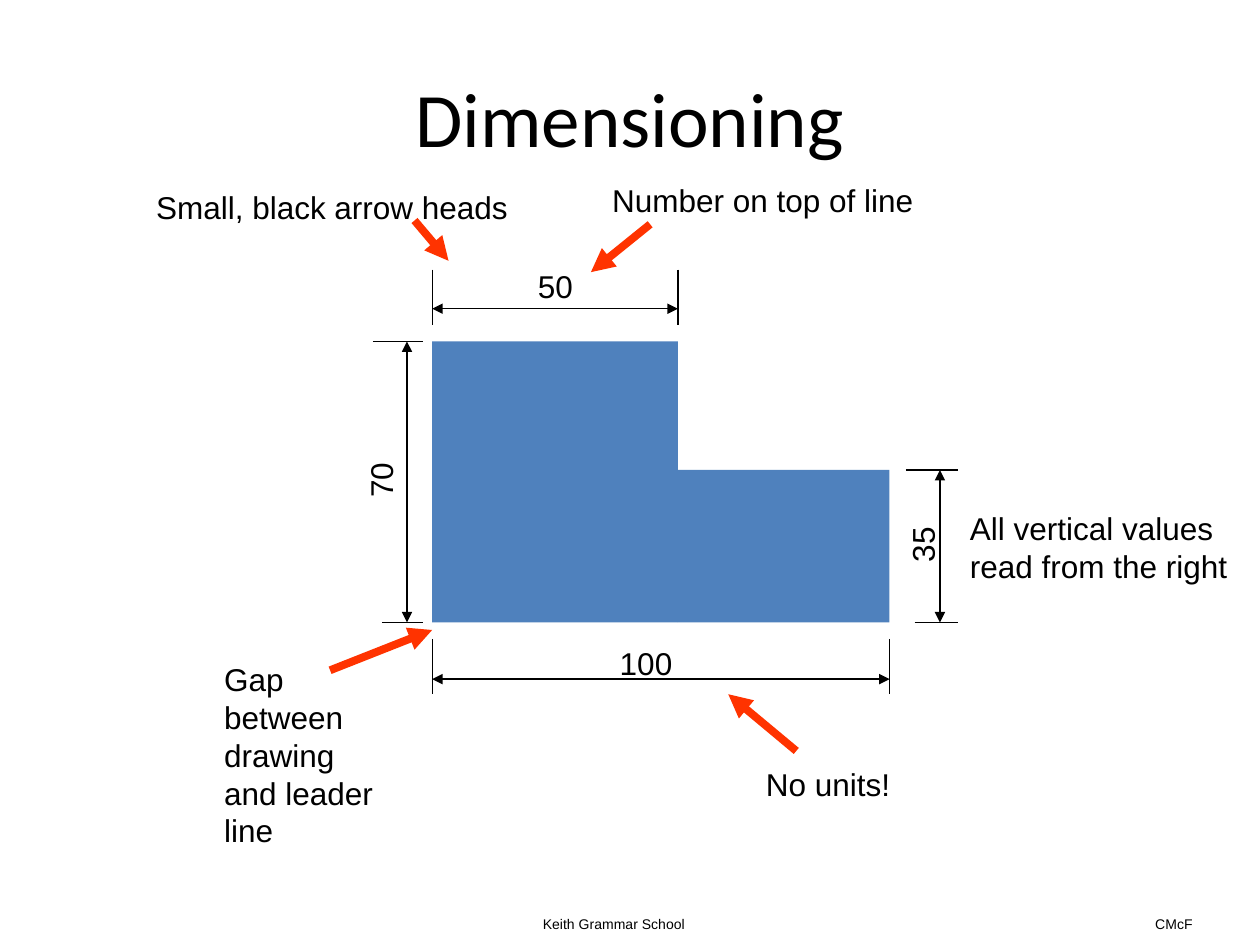
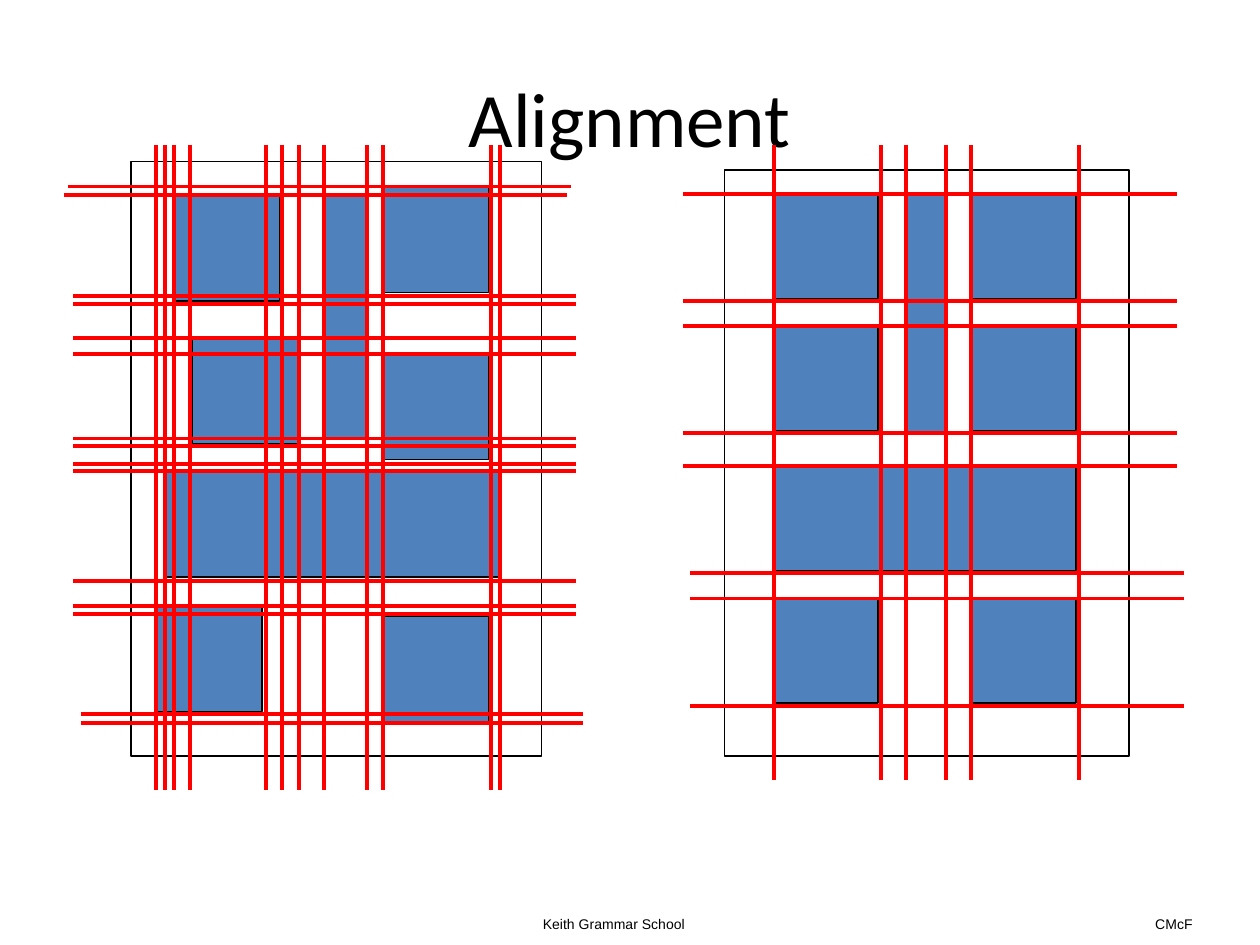
"""Build two slides on technical drawing: dimensioning and alignment."""
import pptx
import pptx.dml.color
import pptx.enum.shapes
import pptx.enum.text
import pptx.oxml
import pptx.oxml.ns
import pptx.util

Inches = pptx.util.Inches
ALIGN = pptx.enum.text.PP_ALIGN
COLOURS = {"ink": "000000", "part": "4F81BD", "paper": "FFFFFF",
           "note": "FF3300", "guide": "FF0000"}

FOOTERS = [("Keith Grammar School", (4.21, 7.22, 1.33, 0.23)),
           ("CMcF", (9.07, 7.22, 0.5, 0.23))]

LEFT, STEP, RIGHT = 3.43, 5.38, 7.06
TOP, SHELF, BASE = 2.71, 3.73, 4.94
PARTS = [(LEFT, TOP, STEP, BASE), (STEP, SHELF, RIGHT, BASE)]
SPANS = [
    {"value": "100", "box": (4.82, 5.06, 0.62, 0.4), "ends": (LEFT, RIGHT),
     "line": 5.39, "leads": [(5.07, 5.51), (5.07, 5.51)]},
    {"value": "50", "box": (4.17, 2.07, 0.48, 0.4), "ends": (LEFT, STEP),
     "line": 2.45, "leads": [(2.14, 2.58), (2.14, 2.58)]},
    {"value": "70", "box": (2.78, 3.61, 0.48, 0.4), "ends": (TOP, BASE),
     "line": 3.23, "leads": [(2.96, 3.36), (3.03, 3.36)], "upright": True},
    {"value": "35", "box": (7.08, 4.12, 0.48, 0.4), "ends": (SHELF, BASE),
     "line": 7.46, "leads": [(7.19, 7.6), (7.26, 7.6)], "upright": True},
]
NOTES = [
    ("Gap between drawing and leader line", (1.68, 5.19, 1.41, 1.6), True),
    ("Number on top of line", (4.76, 1.39, 2.59, 0.4), False),
    ("Small, black arrow heads", (1.14, 1.44, 2.99, 0.4), False),
    ("No units!", (5.98, 6.02, 1.19, 0.4), False),
    ("All vertical values\nread from the right", (7.6, 3.99, 2.24, 0.7), False),
]
ARROWS = [((2.62, 5.32), (3.43, 5)), ((3.29, 1.75), (3.56, 2.07)),
          ((5.16, 1.78), (4.69, 2.16)), ((6.32, 5.96), (5.78, 5.51))]

SHEETS = [
    {"page": (5.75, 1.35, 3.21, 4.65), "size": 0.83,
     "tiles": [(x, y) for y in (1.54, 2.59, 4.75) for x in (6.14, 7.71)],
     "bars": [(6.14, 3.7, 2.4, 0.83), (7.19, 1.54, 0.33, 1.9)],
     "span": (1.15, 6.19),
     "cols": [6.14, 6.99, 7.19, 7.51, 7.71, 8.56],
     "reach": 3.92,
     "rows": {5.42: [1.54, 2.39, 2.59, 3.44, 3.7], 5.48: [4.55, 4.75, 5.6]}},
    {"page": (1.04, 1.28, 3.26, 4.72), "size": 0.84,
     "tiles": [(1.38, 1.55), (1.53, 2.68), (1.24, 4.81),
               (3.04, 1.48), (3.04, 2.81), (3.04, 4.89)],
     "bars": [(1.31, 3.74, 2.66, 0.84), (2.57, 1.55, 0.33, 1.93)],
     "span": (1.15, 6.27),
     "cols": [1.24, 1.31, 1.38, 1.51, 2.11, 2.24,
              2.37, 2.57, 2.91, 3.04, 3.9, 3.97],
     "reach": 3.99,
     "rows": {0.54: [1.48], 0.51: [1.55],
              0.58: [2.35, 2.41, 2.68, 2.81, 3.48, 3.54,
                     3.68, 3.74, 4.61, 4.81, 4.87],
              0.64: [5.67, 5.74]}},
]


def tint(name):
    return pptx.dml.color.RGBColor.from_string(COLOURS[name])


def write(slide, text, box, size=18, face="Arial", wrap=False, grow=True,
          align=ALIGN.LEFT, anchor=pptx.enum.text.MSO_ANCHOR.TOP, turn=0):
    label = slide.shapes.add_textbox(*map(Inches, box))
    label.rotation = turn
    frame = label.text_frame
    frame.text = text
    frame.word_wrap = wrap
    frame.vertical_anchor = anchor
    if grow:
        frame.auto_size = pptx.enum.text.MSO_AUTO_SIZE.SHAPE_TO_FIT_TEXT
    for para in frame.paragraphs:
        para.alignment = align
        para.font.size = pptx.util.Pt(size)
        para.font.name = face
        para.font.color.rgb = tint("ink")


def block(shapes, box, fill="part", edge=None):
    rect = shapes.add_shape(pptx.enum.shapes.MSO_SHAPE.RECTANGLE,
                            *map(Inches, box))
    rect.shadow.inherit = False
    rect.fill.solid()
    rect.fill.fore_color.rgb = tint(fill)
    if edge:
        rect.line.color.rgb = tint(edge)
        rect.line.width = pptx.util.Pt(0.75)
    else:
        rect.line.fill.background()


def rule(shapes, start, end, colour="ink", width=0.75, tips=()):
    line = shapes.add_connector(pptx.enum.shapes.MSO_CONNECTOR.STRAIGHT,
                                *map(Inches, start + end))
    line.line.color.rgb = tint(colour)
    line.line.width = pptx.util.Pt(width)
    for tip in tips:
        mark = pptx.oxml.ns.qn("a:" + tip)
        line.line._get_or_add_ln().makeelement(mark)
        pptx_tip = line.line._get_or_add_ln().makeelement(mark, {"type": "triangle"})
        line.line._get_or_add_ln().append(pptx_tip)
    props = line._element.spPr
    props.append(props.makeelement(pptx.oxml.ns.qn("a:effectLst")))


def start(deck, title):
    slide = deck.slides.add_slide(deck.slide_layouts[6])
    for text, box in FOOTERS:
        write(slide, text, box, size=8)
    write(slide, title, (0.5, 0.3, 9, 1.25), size=44, face="Calibri",
          wrap=True, grow=False, align=ALIGN.CENTER,
          anchor=pptx.enum.text.MSO_ANCHOR.MIDDLE)
    return slide


def measure(slide, span):
    upright = span.get("upright", False)

    def point(along, across):
        return (across, along) if upright else (along, across)

    for end, (near, far) in zip(span["ends"], span["leads"]):
        rule(slide.shapes, point(end, near), point(end, far))
    first, last = (point(end, span["line"]) for end in span["ends"])
    rule(slide.shapes, first, last, tips=("headEnd", "tailEnd"))
    write(slide, span["value"], span["box"], turn=270 if upright else 0)


def dimension(deck):
    slide = start(deck, "Dimensioning")
    for left, top, right, base in PARTS:
        block(slide.shapes, (left, top, right - left, base - top))
    for span in SPANS:
        measure(slide, span)
    for text, box, wrap in NOTES:
        write(slide, text, box, wrap=wrap)
    for tail, tip in ARROWS:
        rule(slide.shapes, tail, tip, "note", 4.5, tips=("tailEnd",))


def align(deck):
    slide = start(deck, "Alignment")
    for sheet in SHEETS:
        shapes = slide.shapes.add_group_shape().shapes
        block(shapes, sheet["page"], "paper", "ink")
        tiles = [spot + (sheet["size"],) * 2 for spot in sheet["tiles"]]
        for box in tiles + sheet["bars"]:
            block(shapes, box, edge="ink")
        top, base = sheet["span"]
        for x in sheet["cols"]:
            rule(shapes, (x, top), (x, base), "guide", 2.25)
        for left, rows in sheet["rows"].items():
            for y in rows:
                rule(shapes, (left, y), (left + sheet["reach"], y),
                     "guide", 2.25)


def main():
    deck = pptx.Presentation()
    deck.slide_width, deck.slide_height = Inches(10), Inches(7.5)
    dimension(deck)
    align(deck)
    deck.save("out.pptx")


if __name__ == "__main__":
    main()
